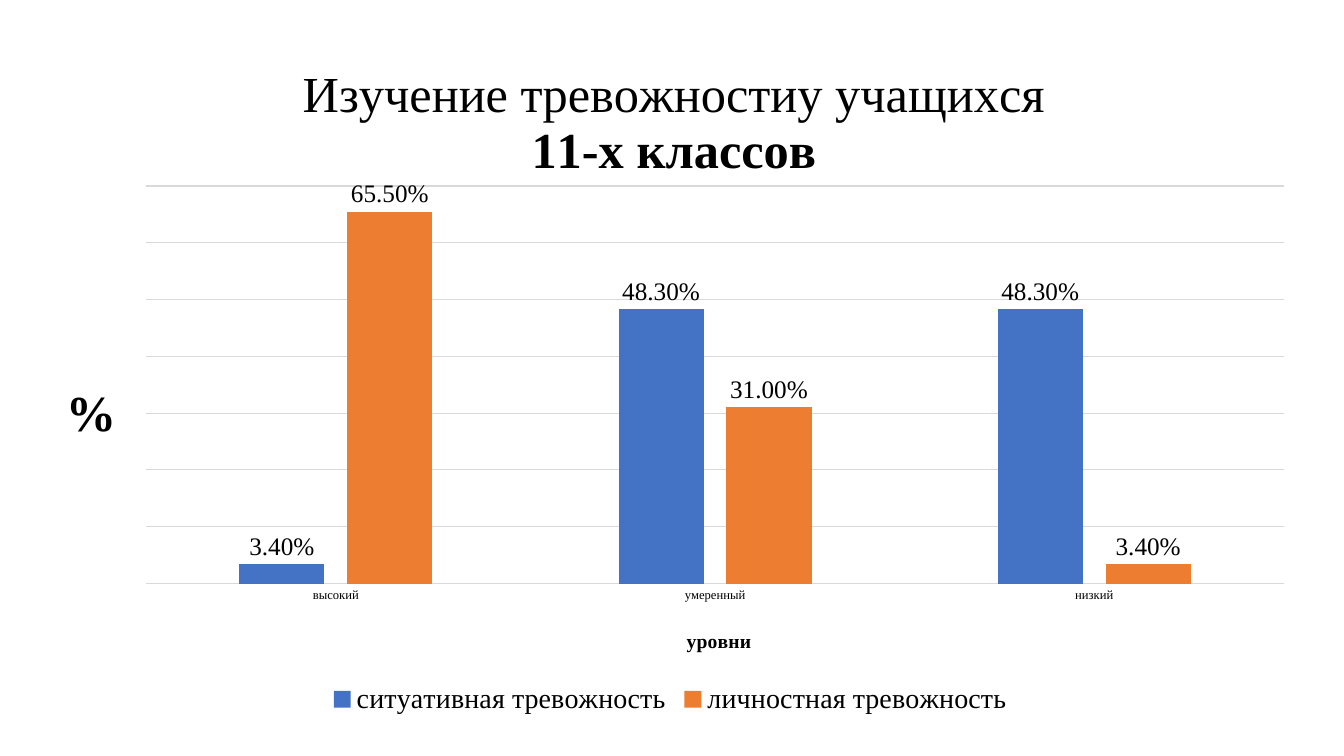
import pptx
import pptx.chart.data
import pptx.dml.color
import pptx.enum.chart
import pptx.oxml
import pptx.oxml.ns
import pptx.util

Pt = pptx.util.Pt
BLACK = pptx.dml.color.RGBColor(0x00, 0x00, 0x00)
GRID = pptx.dml.color.RGBColor(0xD9, 0xD9, 0xD9)
BLUE = pptx.dml.color.RGBColor(0x44, 0x72, 0xC4)
ORANGE = pptx.dml.color.RGBColor(0xED, 0x7D, 0x31)
FACE = "Times New Roman"
PERCENT = "0.00%"


def write(paragraph, text, size, bold=False):
    run = paragraph.add_run()
    run.text = text
    run.font.name = FACE
    run.font.size = Pt(size)
    run.font.bold = bold
    run.font.color.rgb = BLACK


def place(element, index, **fractions):
    """Fix a chart part at fractions of the chart area."""
    for old in element.findall(pptx.oxml.ns.qn("c:layout")):
        element.remove(old)
    target = '<c:layoutTarget val="inner"/>' if "w" in fractions else ""
    modes = "".join(f'<c:{side}Mode val="edge"/>' for side in "xy")
    values = "".join(f'<c:{side} val="{value}"/>' for side, value in fractions.items())
    element.insert(index, pptx.oxml.parse_xml(
        f'<c:layout {pptx.oxml.ns.nsdecls("c")}><c:manualLayout>'
        f'{target}{modes}{values}</c:manualLayout></c:layout>'))


presentation = pptx.Presentation()
presentation.slide_width, presentation.slide_height = Pt(960), Pt(540)
slide = presentation.slides.add_slide(presentation.slide_layouts[6])

# Anxiety levels by kind
anxiety = pptx.chart.data.CategoryChartData(number_format=PERCENT)
anxiety.categories = ["высокий", "умеренный", "низкий"]
anxiety.add_series("ситуативная тревожность", [0.034, 0.483, 0.483])
anxiety.add_series("личностная тревожность", [0.655, 0.31, 0.034])
chart = slide.shapes.add_chart(
    pptx.enum.chart.XL_CHART_TYPE.COLUMN_CLUSTERED,
    Pt(22.3), Pt(25.2), Pt(913), Pt(489.6), anxiety).chart
chart.font.name = FACE
chart.font.size = Pt(10)
chart.font.color.rgb = BLACK

# Columns and value labels
columns = chart.plots[0]
columns.gap_width = 219
columns.overlap = -27
columns.vary_by_categories = False
for series, color in zip(columns.series, (BLUE, ORANGE)):
    series.format.fill.solid()
    series.format.fill.fore_color.rgb = color
    labels = series.data_labels
    labels.show_value = True
    labels.position = pptx.enum.chart.XL_LABEL_POSITION.OUTSIDE_END
    labels.number_format = PERCENT
    labels.number_format_is_linked = False
    labels.font.name = FACE
    labels.font.size = Pt(18)
    labels.font.color.rgb = BLACK

# Axes
levels = chart.category_axis
levels.major_tick_mark = pptx.enum.chart.XL_TICK_MARK.NONE
levels.tick_labels.font.name = FACE
levels.tick_labels.font.size = Pt(9)
levels.tick_labels.font.color.rgb = BLACK
share = chart.value_axis
share.visible = False
share.minimum_scale, share.maximum_scale, share.major_unit = 0, 0.7, 0.1
share.has_major_gridlines = True
for line in (levels.format.line, share.major_gridlines.format.line):
    line.color.rgb = GRID
    line.width = Pt(0.75)

# Legend
chart.has_legend = True
chart.legend.position = pptx.enum.chart.XL_LEGEND_POSITION.BOTTOM
chart.legend.include_in_layout = False
chart.legend.font.name = FACE
chart.legend.font.size = Pt(20)
chart.legend.font.color.rgb = BLACK

# Chart and axis titles
heading = chart.chart_title.text_frame
write(heading.paragraphs[0], "Изучение тревожностиу учащихся", size=36)
write(heading.add_paragraph(), "11-х классов", size=36, bold=True)
write(levels.axis_title.text_frame.paragraphs[0], "уровни", size=14, bold=True)
percent = share.axis_title.text_frame
write(percent.paragraphs[0], "%", size=36, bold=True)
percent._txBody.bodyPr.set("rot", "0")
percent._txBody.bodyPr.set("vert", "horz")

# Positions inside the chart
place(chart.chart_title._element, 1, x=0.21, y=0.04)
place(levels.axis_title._element, 1, x=0.51, y=0.86)
place(share.axis_title._element, 1, x=0.02, y=0.49)
plot_area = columns._element.getparent()
place(plot_area, 0, x=0.09, y=0.22, w=0.89, h=0.58)

presentation.save("out.pptx")
